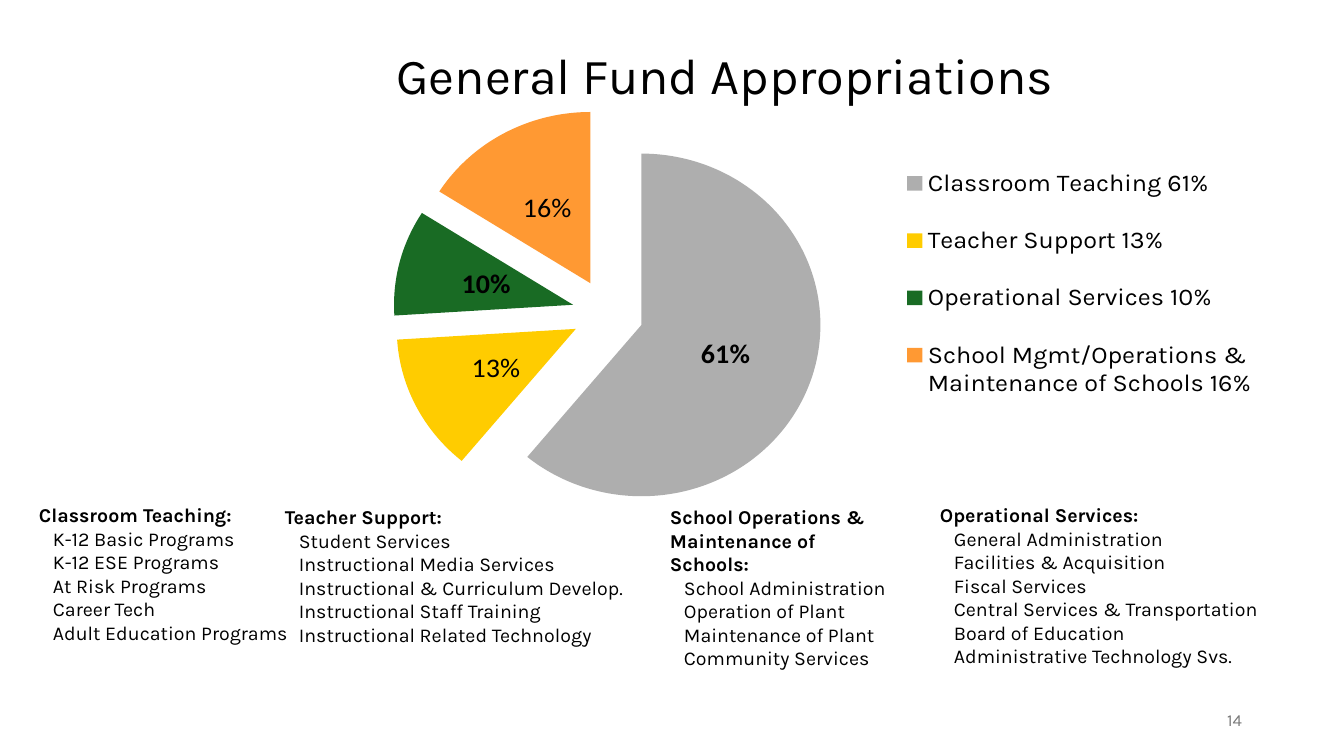
from dataclasses import dataclass

from lxml.etree import SubElement
from pptx import Presentation
from pptx.chart.chart import Chart
from pptx.chart.data import CategoryChartData
from pptx.dml.color import RGBColor
from pptx.enum.chart import XL_CHART_TYPE, XL_LABEL_POSITION, XL_LEGEND_POSITION
from pptx.enum.text import MSO_ANCHOR, PP_ALIGN
from pptx.oxml.ns import qn
from pptx.slide import Slide
from pptx.text.text import Font, TextFrame
from pptx.util import Emu, Pt

EMU_PER_PX = 914400 / 100.8
TEXT_FONT = "Karla"
LABEL_FONT = "Calibri"
ITEM_INDENT = 14
COLORS = {
    "text": "000000",
    "page_number": "797979",
    "teaching": "AEAEAE",
    "support": "FFCC00",
    "services": "196B24",
    "schools": "FF9933",
}


@dataclass(frozen=True)
class Box:
    left: int
    top: int
    width: int
    height: int


@dataclass(frozen=True)
class Slice:
    category: str
    percent: int
    color: str
    bold: bool


@dataclass(frozen=True)
class ProgramList:
    box: Box
    heading: str
    items: tuple[str, ...]


TITLE_BOX = Box(106, -2, 1238, 160)
NUMBER_BOX = Box(950, 701, 302, 40)
CHART_BOX = Box(241, 112, 1103, 388)
PLOT_BOX = Box(188, 14, 358, 358)
LEGEND_BOX = Box(656, 12, 364, 299)

SLICES = (
    Slice("Classroom Teaching 61%", 61, "teaching", True),
    Slice("Teacher Support 13%", 13, "support", False),
    Slice("Operational Services 10%", 10, "services", True),
    Slice("School Mgmt/Operations & Maintenance of Schools 16%", 16, "schools", False),
)

PROGRAM_LISTS = (
    ProgramList(
        Box(29, 498, 283, 152),
        "Classroom Teaching:",
        ("K-12 Basic Programs", "K-12 ESE Programs", "At Risk Programs",
         "Career Tech", "Adult Education Programs"),
    ),
    ProgramList(
        Box(275, 500, 384, 152),
        "Teacher Support:",
        ("Student Services", "Instructional Media Services",
         "Instructional & Curriculum Develop.", "Instructional Staff Training",
         "Instructional Related Technology"),
    ),
    ProgramList(
        Box(660, 500, 246, 152),
        "School Operations & Maintenance of Schools:",
        ("School Administration", "Operation of Plant", "Maintenance of Plant",
         "Community Services"),
    ),
    ProgramList(
        Box(930, 498, 384, 176),
        "Operational Services:",
        ("General Administration", "Facilities & Acquisition", "Fiscal Services",
         "Central Services & Transportation", "Board of Education",
         "Administrative Technology Svs."),
    ),
)


def px(length: int) -> Emu:
    return Emu(round(length * EMU_PER_PX))


def place(box: Box) -> tuple[Emu, Emu, Emu, Emu]:
    return px(box.left), px(box.top), px(box.width), px(box.height)


def style_font(font: Font, size: int, color: str = "text",
               bold: bool = False, name: str = TEXT_FONT) -> None:
    font.name = name
    font.size = Pt(size)
    font.bold = bold
    font.color.rgb = RGBColor.from_string(COLORS[color])


def add_text_box(slide: Slide, box: Box) -> TextFrame:
    text_frame = slide.shapes.add_textbox(*place(box)).text_frame
    text_frame.word_wrap = True
    return text_frame


def add_single_line(slide: Slide, box: Box, text: str, size: int,
                    color: str, alignment: PP_ALIGN) -> None:
    text_frame = add_text_box(slide, box)
    text_frame.vertical_anchor = MSO_ANCHOR.MIDDLE
    paragraph = text_frame.paragraphs[0]
    paragraph.alignment = alignment
    paragraph.line_spacing = 0.9
    run = paragraph.add_run()
    run.text = text
    style_font(run.font, size, color)


def add_program_list(slide: Slide, program_list: ProgramList) -> None:
    text_frame = add_text_box(slide, program_list.box)
    heading = text_frame.paragraphs[0].add_run()
    heading.text = program_list.heading
    style_font(heading.font, 14, bold=True)
    for item in program_list.items:
        paragraph = text_frame.add_paragraph()
        paragraph._p.get_or_add_pPr().set("marL", str(px(ITEM_INDENT)))
        run = paragraph.add_run()
        run.text = item
        style_font(run.font, 14)


def set_layout(parent, predecessor: str, box: Box, inner: bool = False) -> None:
    for old_layout in parent.findall(qn("c:layout")):
        parent.remove(old_layout)
    layout = SubElement(parent, qn("c:layout"))
    manual = SubElement(layout, qn("c:manualLayout"))
    settings = {"layoutTarget": "inner"} if inner else {}
    settings |= {
        "xMode": "edge",
        "yMode": "edge",
        "x": f"{box.left / CHART_BOX.width:.3f}",
        "y": f"{box.top / CHART_BOX.height:.3f}",
        "w": f"{box.width / CHART_BOX.width:.3f}",
        "h": f"{box.height / CHART_BOX.height:.3f}",
    }
    for tag, value in settings.items():
        SubElement(manual, qn(f"c:{tag}")).set("val", value)
    if predecessor:
        parent.find(qn(predecessor)).addnext(layout)
    else:
        parent.insert(0, layout)


def style_slices(chart: Chart) -> None:
    plot = chart.plots[0]
    plot.vary_by_categories = True
    series = plot.series[0]
    labels = series.data_labels
    labels.show_percentage = True
    labels.show_value = False
    labels.number_format = "0%"
    labels.number_format_is_linked = False
    labels.position = XL_LABEL_POSITION.CENTER
    style_font(labels.font, 20, bold=True, name=LABEL_FONT)
    for index, pie_slice in enumerate(SLICES):
        point = series.points[index]
        point.format.fill.solid()
        point.format.fill.fore_color.rgb = RGBColor.from_string(COLORS[pie_slice.color])
        point.format.line.fill.background()
        if not pie_slice.bold:
            run = point.data_label.text_frame.paragraphs[0].add_run()
            run.text = f"{pie_slice.percent}%"
            style_font(run.font, 20, name=LABEL_FONT)
            point.data_label.position = XL_LABEL_POSITION.CENTER
    for data_point in series._element.findall(qn("c:dPt")):
        explosion = SubElement(data_point, qn("c:explosion"))
        explosion.set("val", "20")
        data_point.find(qn("c:spPr")).addprevious(explosion)


def add_pie(slide: Slide) -> None:
    chart_data = CategoryChartData()
    chart_data.categories = [pie_slice.category for pie_slice in SLICES]
    chart_data.add_series("Series 1", [pie_slice.percent for pie_slice in SLICES])
    chart = slide.shapes.add_chart(XL_CHART_TYPE.PIE, *place(CHART_BOX), chart_data).chart
    chart.has_title = False
    style_font(chart.font, 10)
    chart.has_legend = True
    chart.legend.position = XL_LEGEND_POSITION.RIGHT
    chart.legend.include_in_layout = False
    style_font(chart.legend.font, 18)
    set_layout(chart.legend._element, "c:legendPos", LEGEND_BOX)
    set_layout(chart._chartSpace.chart.plotArea, "", PLOT_BOX, inner=True)
    style_slices(chart)


def main() -> None:
    presentation = Presentation()
    presentation.slide_width = px(1344)
    presentation.slide_height = px(756)
    slide = presentation.slides.add_slide(presentation.slide_layouts[6])
    add_single_line(slide, NUMBER_BOX, "14", 12, "page_number", PP_ALIGN.RIGHT)
    add_single_line(slide, TITLE_BOX, "General Fund Appropriations", 36, "text", PP_ALIGN.CENTER)
    add_pie(slide)
    for program_list in PROGRAM_LISTS:
        add_program_list(slide, program_list)
    presentation.save("out.pptx")


if __name__ == "__main__":
    main()
